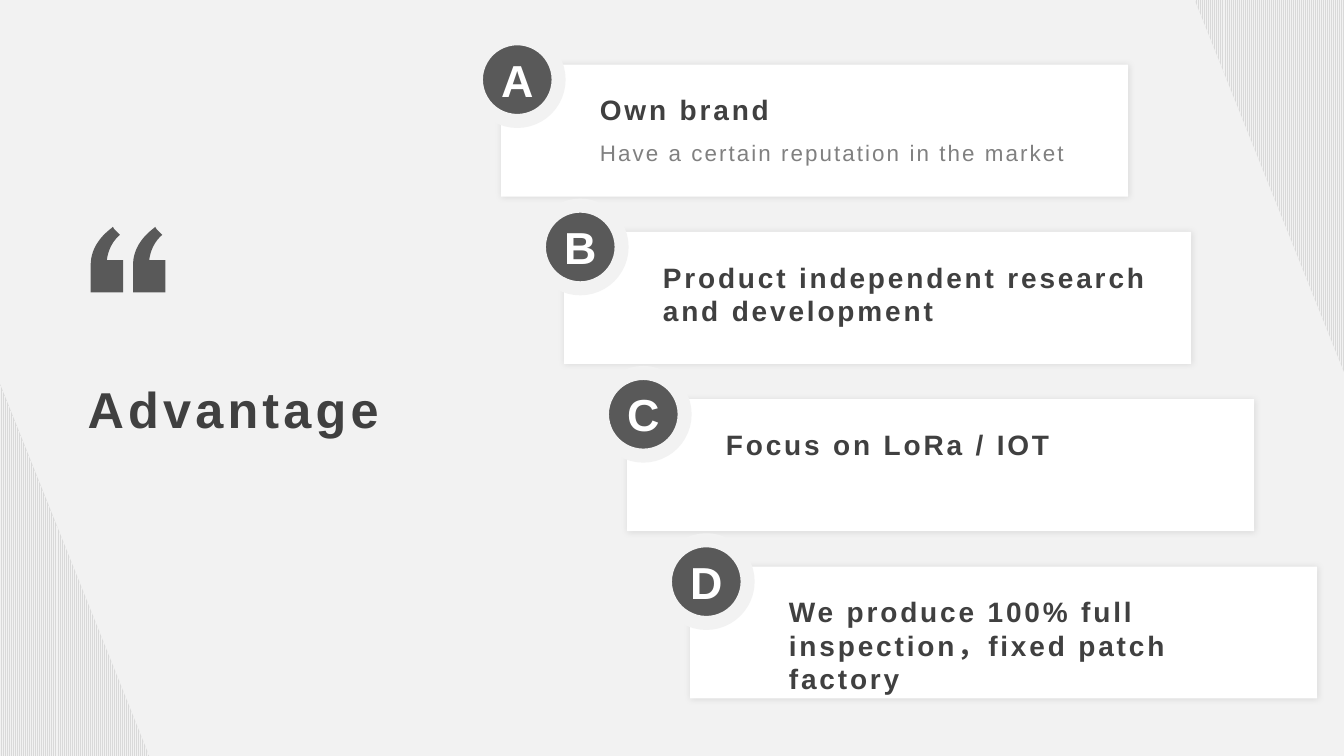
from lxml import etree
from pptx import Presentation
from pptx.dml.color import RGBColor
from pptx.enum.dml import MSO_PATTERN
from pptx.enum.shapes import MSO_SHAPE
from pptx.enum.text import MSO_ANCHOR, PP_ALIGN
from pptx.oxml import parse_xml
from pptx.util import Inches, Pt

RECTANGLE = MSO_SHAPE.RECTANGLE
OVAL = MSO_SHAPE.OVAL
STRIPES = MSO_PATTERN.NARROW_VERTICAL
TOP = MSO_ANCHOR.TOP
BOTTOM = MSO_ANCHOR.BOTTOM
LEFT = PP_ALIGN.LEFT
CENTER = PP_ALIGN.CENTER

PAPER = RGBColor(0xF2, 0xF2, 0xF2)
STRIPE = RGBColor(0xD9, 0xD9, 0xD9)
WHITE = RGBColor(0xFF, 0xFF, 0xFF)
DARK = RGBColor(0x59, 0x59, 0x59)
HEADING = RGBColor(0x40, 0x40, 0x40)
MUTED = RGBColor(0x80, 0x80, 0x80)

FONT = "Arial"
PAGE_WIDTH, PAGE_HEIGHT = 13.33, 7.5
CARD_WIDTH, CARD_HEIGHT = 6.22, 1.31
CARD_LEFT, CARD_TOP = 4.97, 0.64
STEP_X, STEP_Y = 0.625, 1.66
BADGE_SIZE = 0.82
CORNER_WIDTH, CORNER_HEIGHT = 1.48, 3.69
ADVANTAGES = [
    ("A", "Own brand", "Have a certain reputation in the market"),
    ("B", "Product independent research and development", None),
    ("C", "Focus on LoRa / IOT", None),
    ("D", "We produce 100% full inspection，fixed patch factory", None),
]
SHADOW = (
    '<a:effectLst xmlns:a="http://schemas.openxmlformats.org/drawingml/2006/main">'
    '<a:outerShdw blurRad="63500" dist="0" dir="0" algn="ctr" rotWithShape="0">'
    '<a:srgbClr val="000000"><a:alpha val="10000"/></a:srgbClr>'
    '</a:outerShdw></a:effectLst>'
)


def add_text(page, box, text, size, color, bold=True, spacing=0, align=LEFT,
             anchor=TOP, wrap=True, margins=(0.11, 0.04, 0.08, 0.04)):
    frame = page.shapes.add_textbox(*map(Inches, box)).text_frame
    frame.word_wrap = wrap
    frame.vertical_anchor = anchor
    (frame.margin_left, frame.margin_top,
     frame.margin_right, frame.margin_bottom) = map(Inches, margins)
    frame.text = text
    para = frame.paragraphs[0]
    para.alignment = align
    span = para.runs[0]
    span.font.name = FONT
    span.font.size = Pt(size)
    span.font.bold = bold
    span.font.color.rgb = color
    if spacing:
        span._r.get_or_add_rPr().set("spc", str(int(spacing * 100)))
    return para


def add_outline(page, points):
    corners = [(Inches(x), Inches(y)) for x, y in points]
    builder = page.shapes.build_freeform(*corners[0])
    builder.add_line_segments(corners[1:])
    shape = builder.convert_to_shape()
    shape.shadow.inherit = False
    shape.line.fill.background()
    return shape


def add_corner(page, points):
    fill = add_outline(page, points).fill
    fill.patterned()
    fill.pattern = STRIPES
    fill.fore_color.rgb = PAPER
    fill.back_color.rgb = STRIPE


def curve(start, pull_start, pull_end, end, steps=16):
    def at(t):
        weights = ((1 - t) ** 3, 3 * t * (1 - t) ** 2, 3 * t * t * (1 - t), t ** 3)
        controls = (start, pull_start, pull_end, end)
        return tuple(sum(w * point[axis] for w, point in zip(weights, controls))
                     for axis in (0, 1))
    return [at(step / steps) for step in range(steps + 1)]


def add_quote_mark(page, left, top):
    outline = [(0.32, 0.65), (0, 0.65)]
    outline += curve((0, 0.36), (0.01, 0.13), (0.22, 0.01), (0.22, 0))
    outline += curve((0.23, 0.02), (0.25, 0.04), (0.26, 0.05), (0.28, 0.07))
    outline += curve((0.29, 0.08), (0.29, 0.08), (0.18, 0.16), (0.16, 0.33))
    outline.append((0.32, 0.33))
    shape = add_outline(page, [(left + x, top + y) for x, y in outline])
    shape.fill.solid()
    shape.fill.fore_color.rgb = DARK


def add_heading(page, left, top):
    for offset in (0, 0.42):
        add_quote_mark(page, left + 0.14 + offset, top)
    add_text(page, (left, top + 0.85, 3.97, 1.29), "Advantage", 36, HEADING,
             spacing=3, anchor=BOTTOM, margins=(0.11, 0.04, 0.07, 0.04))


def add_badge(page, left, top, letter):
    badge = page.shapes.add_shape(
        OVAL, *map(Inches, (left, top, BADGE_SIZE, BADGE_SIZE)))
    badge.shadow.inherit = False
    badge.fill.solid()
    badge.fill.fore_color.rgb = DARK
    badge.line.color.rgb = PAPER
    badge.line.width = Pt(10)
    add_text(page, (left + 0.15, top + 0.09, 0.52, 0.64), letter, 32, WHITE,
             align=CENTER, wrap=False, margins=(0.1, 0.05, 0.1, 0.05))


def add_card(page, left, top, letter, title, detail):
    card = page.shapes.add_shape(
        RECTANGLE, *map(Inches, (left, top, CARD_WIDTH, CARD_HEIGHT)))
    card.fill.solid()
    card.fill.fore_color.rgb = WHITE
    card.line.fill.background()
    card._element.spPr.append(parse_xml(SHADOW))
    if detail:
        para = add_text(page, (left + 0.87, top + 0.66, 5.06, 0.35), detail, 16,
                        MUTED, bold=False, spacing=1.5, margins=(0.11, 0, 0.09, 0))
        para.line_spacing = 1.3
        para.space_after = Pt(10)
    add_text(page, (left + 0.87, top + 0.24, 5.06, 0.42), title, 20, HEADING,
             spacing=2)
    add_badge(page, left - 0.25, top - 0.26, letter)


def add_background(page):
    page.background.fill.solid()
    page.background.fill.fore_color.rgb = PAPER
    add_corner(page, [(PAGE_WIDTH - CORNER_WIDTH, 0), (PAGE_WIDTH, 0),
                      (PAGE_WIDTH, CORNER_HEIGHT)])
    add_corner(page, [(CORNER_WIDTH, PAGE_HEIGHT), (0, PAGE_HEIGHT),
                      (0, PAGE_HEIGHT - CORNER_HEIGHT)])


def main():
    deck = Presentation()
    deck.slide_width = Inches(PAGE_WIDTH)
    deck.slide_height = Inches(PAGE_HEIGHT)
    page = deck.slides.add_slide(deck.slide_layouts[6])
    add_background(page)
    add_heading(page, 0.76, 2.25)
    for index, advantage in enumerate(ADVANTAGES):
        add_card(page, CARD_LEFT + index * STEP_X, CARD_TOP + index * STEP_Y,
                 *advantage)
    deck.save("out.pptx")


if __name__ == "__main__":
    main()
